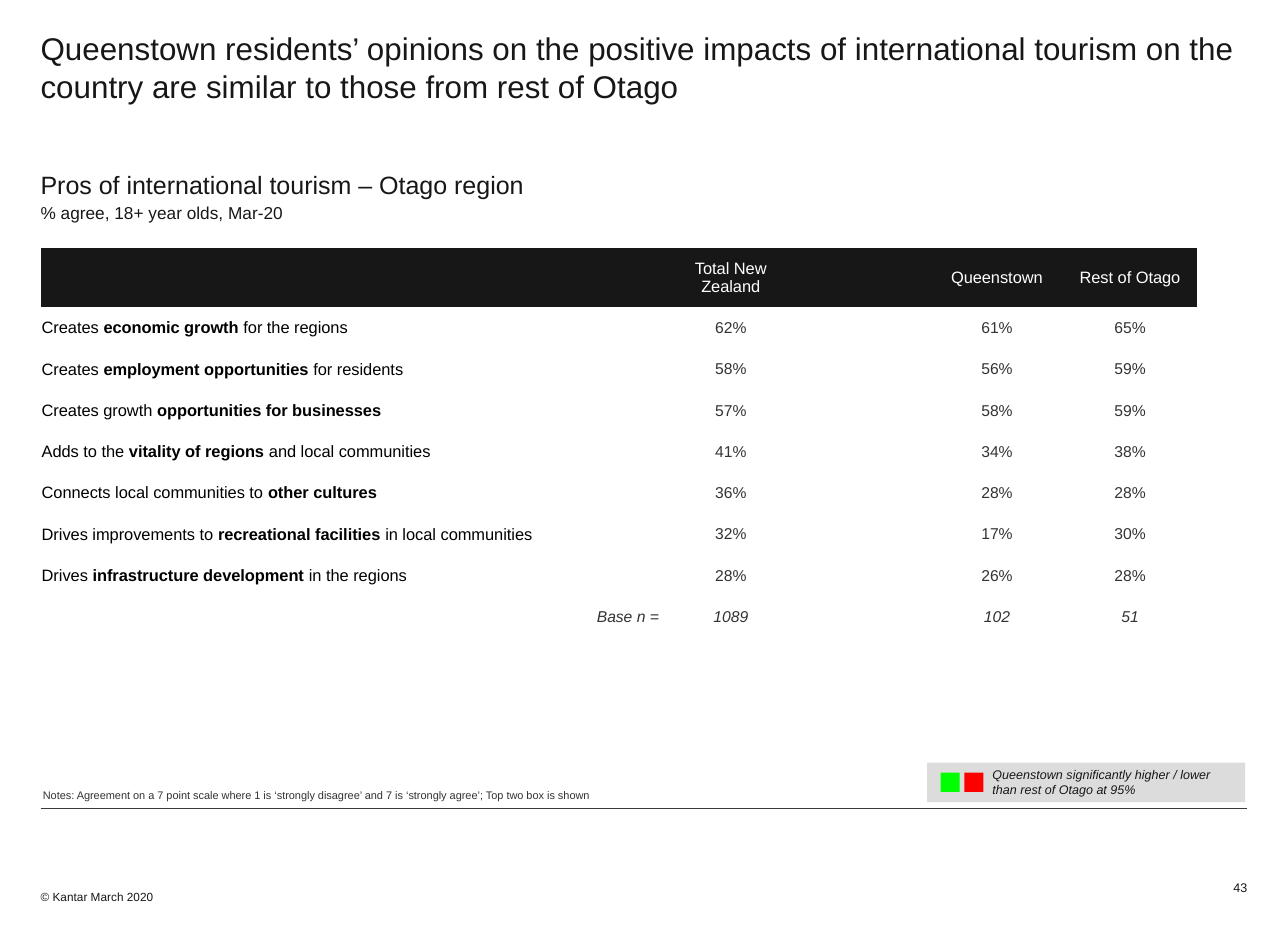
from pptx import Presentation
from pptx.dml.color import RGBColor as RGB
from pptx.enum.shapes import MSO_CONNECTOR as CONN, MSO_SHAPE as SHAPE
from pptx.enum.text import MSO_ANCHOR as ANCHOR, PP_ALIGN as ALIGN
from pptx.oxml.ns import qn
from pptx.util import Pt
from lxml.etree import SubElement

COLORS = {"ink": "171717", "grey": "333333", "rule": "3A3A3A", "black": "000000",
          "white": "FFFFFF", "panel": "DCDCDC", "higher": "00FF00", "lower": "FF0000"}
NO_STYLE = "{2D5ABB26-0587-4C30-8999-92F81FD0307C}"
LEFT, WIDTH = 25.92, 770.4
COLUMNS = [398.16] + [84.96] * 4
HEADER_HEIGHT, ROW_HEIGHT = 37.5, 26.36

HEADERS = ["", "Total New Zealand", "", "Queenstown", "Rest of Otago"]
IMPACTS = [
    ("Creates ", "economic growth ", "for the regions", 62, 61, 65),
    ("Creates ", "employment opportunities ", "for residents", 58, 56, 59),
    ("Creates growth ", "opportunities for businesses", "", 57, 58, 59),
    ("Adds to the ", "vitality of regions ", "and local communities", 41, 34, 38),
    ("Connects local communities to ", "other cultures", "", 36, 28, 28),
    ("Drives improvements to ", "recreational facilities ", "in local communities", 32, 17, 30),
    ("Drives ", "infrastructure development ", "in the regions", 28, 26, 28),
]
BASES = ["Base n = ", "1089", "", "102", "51"]


def color(name):
    return RGB.from_string(COLORS[name])


def add_run(p, text, size, ink="ink", **fmt):
    r = p.add_run()
    r.text = text
    r.font.color.rgb = color(ink)
    for key, value in {"name": "Arial", "size": Pt(size), **fmt}.items():
        setattr(r.font, key, value)


def add_text(s, box, lines, margins=(0, 0, 0, 0), anchor=ANCHOR.TOP, align=ALIGN.LEFT,
             ink="ink", **fmt):
    tf = s.shapes.add_textbox(*map(Pt, box)).text_frame
    tf.word_wrap = True
    tf.vertical_anchor = anchor
    for side, margin in zip(("left", "top", "right", "bottom"), margins):
        setattr(tf, f"margin_{side}", Pt(margin))
    for i, (text, size) in enumerate(lines):
        p = tf.add_paragraph() if i else tf.paragraphs[0]
        p.alignment = align
        if i:
            p.space_before = Pt(size * 0.2)
        add_run(p, text, size, ink, **fmt)


def add_box(s, box, fill):
    sp = s.shapes.add_shape(SHAPE.RECTANGLE, *map(Pt, box))
    sp.shadow.inherit = False
    sp.fill.solid()
    sp.fill.fore_color.rgb = color(fill)
    sp.line.fill.background()


def add_rule(s, x1, x2, y):
    line = s.shapes.add_connector(CONN.STRAIGHT, Pt(x1), Pt(y), Pt(x2), Pt(y))
    line.line.color.rgb = color("rule")
    line.line.width = Pt(0.75)
    SubElement(line._element.spPr, qn("a:effectLst"))


def fill_cell(cell, runs, fill, align=ALIGN.CENTER, size=10, ink="grey"):
    cell.fill.solid()
    cell.fill.fore_color.rgb = color(fill)
    cell.vertical_anchor = ANCHOR.MIDDLE
    cell.margin_left = cell.margin_top = cell.margin_right = Pt(0.72)
    cell.margin_bottom = Pt(0)
    p = cell.text_frame.paragraphs[0]
    p.alignment = align
    p.font.size = Pt(size)
    for text, fmt in runs:
        if text:
            add_run(p, text, size, ink, **fmt)


def add_results(s):
    count = len(IMPACTS) + 2
    height = HEADER_HEIGHT + ROW_HEIGHT * (count - 1)
    frame = s.shapes.add_table(count, len(COLUMNS), Pt(LEFT), Pt(158.4),
                               Pt(sum(COLUMNS)), Pt(height))
    table = frame.table
    table.first_row = table.horz_banding = False
    table._tbl.tblPr.find(qn("a:tableStyleId")).text = NO_STYLE
    for column, width in zip(table.columns, COLUMNS):
        column.width = Pt(width)
    for i, row in enumerate(table.rows):
        row.height = Pt(ROW_HEIGHT if i else HEADER_HEIGHT)
    for j, header in enumerate(HEADERS):
        fill_cell(table.cell(0, j), [(header, {})], "ink", size=10.5, ink="white")
    for i, (start, key, end, total, queenstown, rest) in enumerate(IMPACTS, 1):
        label = [(start, {}), (key, {"bold": True}), (end, {})]
        fill_cell(table.cell(i, 0), label, "white", ALIGN.LEFT, 10.5, "black")
        for j, value in enumerate((total, None, queenstown, rest), 1):
            text = "" if value is None else f"{value}%"
            fill_cell(table.cell(i, j), [(text, {})], "white")
    for j, base in enumerate(BASES):
        fill_cell(table.cell(count - 1, j), [(base, {"italic": True})], "white",
                  ALIGN.CENTER if j else ALIGN.RIGHT)


def add_legend(s):
    add_box(s, (591.84, 486.72, 203.04, 25.2), "panel")
    add_text(s, (630.72, 486.72, 154.08, 25.2),
             [("Queenstown significantly higher / lower than rest of Otago at 95%", 8)],
             margins=(2.88,) * 4, italic=True)
    for i, name in enumerate(("higher", "lower")):
        add_box(s, (600.48 + 15.12 * i, 493.2, 12.24, 12.24), name)


def main():
    prs = Presentation()
    prs.slide_width, prs.slide_height = Pt(822.24), Pt(595.44)
    s = prs.slides.add_slide(prs.slide_layouts[6])
    heading_margins = (0, 18.72, 0, 0)
    add_text(s, (LEFT, 0, WIDTH, 89.28),
             [("Queenstown residents’ opinions on the positive impacts of international tourism "
               "on the country are similar to those from rest of Otago", 20)], heading_margins)
    add_text(s, (LEFT, 89.28, WIDTH, 66.24),
             [("Pros of international tourism – Otago region", 16),
              ("% agree, 18+ year olds, Mar-20", 11)], heading_margins)
    add_results(s)
    add_text(s, (27.36, 495.36, 680.4, 16.56),
             [("Notes: Agreement on a 7 point scale where 1 is ‘strongly disagree’ and 7 is "
               "‘strongly agree’; Top two box is shown", 7)], anchor=ANCHOR.BOTTOM, ink="grey")
    add_legend(s)
    add_rule(s, LEFT, LEFT + WIDTH, 516.24)
    add_text(s, (LEFT, 550.8, 200.16, 41.76), [("© Kantar March 2020", 7.5)],
             margins=(0, 0, 0, 22.32), anchor=ANCHOR.BOTTOM)
    add_text(s, (750.96, 549.36, 45.36, 21.6), [("43", 8)],
             anchor=ANCHOR.BOTTOM, align=ALIGN.RIGHT)
    prs.save("out.pptx")


if __name__ == "__main__":
    main()
